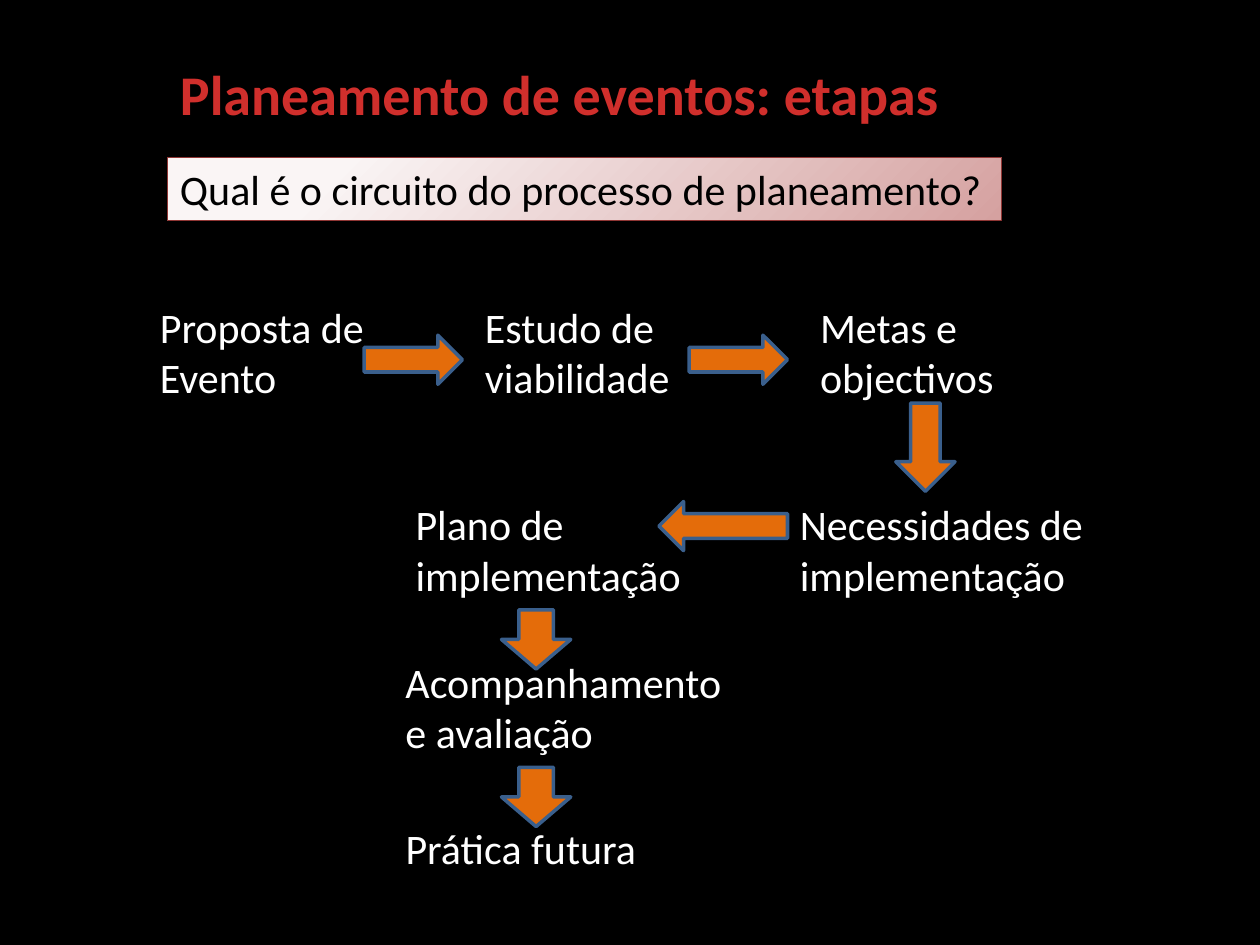
from lxml import etree
from pptx import Presentation
from pptx.dml.color import RGBColor
from pptx.enum.shapes import MSO_SHAPE
from pptx.enum.text import MSO_ANCHOR, MSO_AUTO_SIZE
from pptx.oxml import parse_xml
from pptx.oxml.ns import nsdecls, qn
from pptx.util import Inches, Pt

RECTANGLE = MSO_SHAPE.RECTANGLE
RIGHT, LEFT, DOWN = MSO_SHAPE.RIGHT_ARROW, MSO_SHAPE.LEFT_ARROW, MSO_SHAPE.DOWN_ARROW
MIDDLE = MSO_ANCHOR.MIDDLE
GROW = MSO_AUTO_SIZE.SHAPE_TO_FIT_TEXT
FONT = "Calibri"
COLORS = {
    "background": "000000",
    "step": "FFFFFF",
    "question": "000000",
    "question_line": "903634",
    "title": "D02F2C",
    "title_top": "FC7C7A",
    "title_bottom": "C70500",
    "box_light": "FAF5F5",
    "box_dark": "D5A1A0",
    "arrow": "E46C0A",
    "arrow_line": "3A5F8C",
    "shadow": "000000",
}
LINEAR = '<a:lin ang="5400000" scaled="0"/>'
RADIAL = (
    '<a:path path="circle">'
    '<a:fillToRect l="-15000" t="-15000" r="115000" b="115000"/></a:path>'
)
STEPS = [
    ((1.17, 2.34, 1.95, 0.91), ["Proposta de", "Evento"]),
    ((3.75, 2.34, 1.8, 0.91), ["Estudo de", "viabilidade"]),
    ((6.41, 2.34, 1.72, 0.91), ["Metas e", "objectivos"]),
    ((6.25, 3.91, 2.5, 0.91), ["Necessidades de", "implementação"]),
    ((3.2, 3.91, 2.34, 0.91), ["Plano de", "implementação"]),
    ((3.12, 5.16, 3.2, 0.91), ["Acompanhamento", "e avaliação"]),
    ((3.12, 6.48, 2.05, 0.5), ["Prática futura"]),
]
ARROWS = [
    (RIGHT, (2.89, 2.66, 0.78, 0.39)),
    (RIGHT, (5.47, 2.66, 0.78, 0.39)),
    (DOWN, (7.11, 3.2, 0.47, 0.7)),
    (LEFT, (5.23, 3.98, 1.02, 0.39)),
    (DOWN, (3.98, 4.84, 0.55, 0.47)),
    (DOWN, (3.98, 6.09, 0.55, 0.47)),
]


def rgb(name):
    """Return the named colour."""
    return RGBColor.from_string(COLORS[name])


def inches(box):
    """Convert left, top, width and height to lengths."""
    return [Inches(value) for value in box]


def set_gradient(fill, parent, stops, direction):
    """Fill the parent element with a gradient of (percent, colour) stops."""
    fill.solid()
    stop_xml = "".join(
        f'<a:gs pos="{percent * 1000}"><a:srgbClr val="{COLORS[name]}"/></a:gs>'
        for percent, name in stops
    )
    gradient = parse_xml(
        f'<a:gradFill {nsdecls("a")} rotWithShape="1">'
        f"<a:gsLst>{stop_xml}</a:gsLst>{direction}</a:gradFill>"
    )
    parent.replace(parent.find(qn("a:solidFill")), gradient)


def add_shadow(shape):
    """Give the shape a soft shadow to the lower right."""
    shape.shadow.inherit = False
    effects = shape.element.spPr.find(qn("a:effectLst"))
    shadow = etree.SubElement(
        effects, qn("a:outerShdw"),
        blurRad=str(Pt(10.2)), dist=str(Pt(8)), dir="2700000", rotWithShape="0",
    )
    color = etree.SubElement(shadow, qn("a:srgbClr"), val=COLORS["shadow"])
    etree.SubElement(color, qn("a:alpha"), val="35000")


def write_lines(shape, lines, size, color, wrap=True):
    """Write one paragraph per line and return the last run."""
    frame = shape.text_frame
    frame.word_wrap = wrap
    for index, line in enumerate(lines):
        paragraph = frame.add_paragraph() if index else frame.paragraphs[0]
        run = paragraph.add_run()
        run.text = line
        run.font.name = FONT
        run.font.size = Pt(size)
        run.font.color.rgb = rgb(color)
    return run


def add_title(slide, box):
    """Add the slide title with gradient letters."""
    shape = slide.shapes.add_textbox(*inches(box))
    run = write_lines(shape, ["Planeamento de eventos: etapas"], 32, "title")
    shape.text_frame.vertical_anchor = MIDDLE
    run.font.bold = True
    stops = [(0, "title_top"), (75, "title"), (100, "title_bottom")]
    set_gradient(run.font.fill, run.font.fill._xPr, stops, LINEAR)


def add_question(slide, box):
    """Add the shaded box with the question."""
    shape = slide.shapes.add_textbox(*inches(box))
    stops = [(20, "box_light"), (100, "box_dark")]
    set_gradient(shape.fill, shape.element.spPr, stops, RADIAL)
    shape.line.color.rgb = rgb("question_line")
    shape.line.width = Pt(0.75)
    add_shadow(shape)
    question = "Qual é o circuito do processo de planeamento?"
    write_lines(shape, [question], 24, "question", wrap=False)
    shape.text_frame.auto_size = GROW


def add_step(slide, box, lines):
    """Add the label of one planning step."""
    shape = slide.shapes.add_textbox(*inches(box))
    write_lines(shape, lines, 24, "step", wrap=len(lines) > 1)
    shape.text_frame.auto_size = GROW


def add_arrow(slide, kind, box):
    """Add a block arrow between two steps."""
    shape = slide.shapes.add_shape(kind, *inches(box))
    shape.shadow.inherit = False
    shape.fill.solid()
    shape.fill.fore_color.rgb = rgb("arrow")
    shape.line.color.rgb = rgb("arrow_line")
    shape.line.width = Pt(2)


def main():
    """Build and save the presentation."""
    presentation = Presentation()
    presentation.slide_width = Inches(10)
    presentation.slide_height = Inches(7.5)
    slide = presentation.slides.add_slide(presentation.slide_layouts[6])
    slide.background.fill.solid()
    slide.background.fill.fore_color.rgb = rgb("background")
    add_title(slide, (1.33, 0.23, 7.91, 1.02))
    add_question(slide, (1.33, 1.25, 6.62, 0.5))
    for box, lines in STEPS:
        add_step(slide, box, lines)
    for kind, box in ARROWS:
        add_arrow(slide, kind, box)
    presentation.save("out.pptx")


if __name__ == "__main__":
    main()
